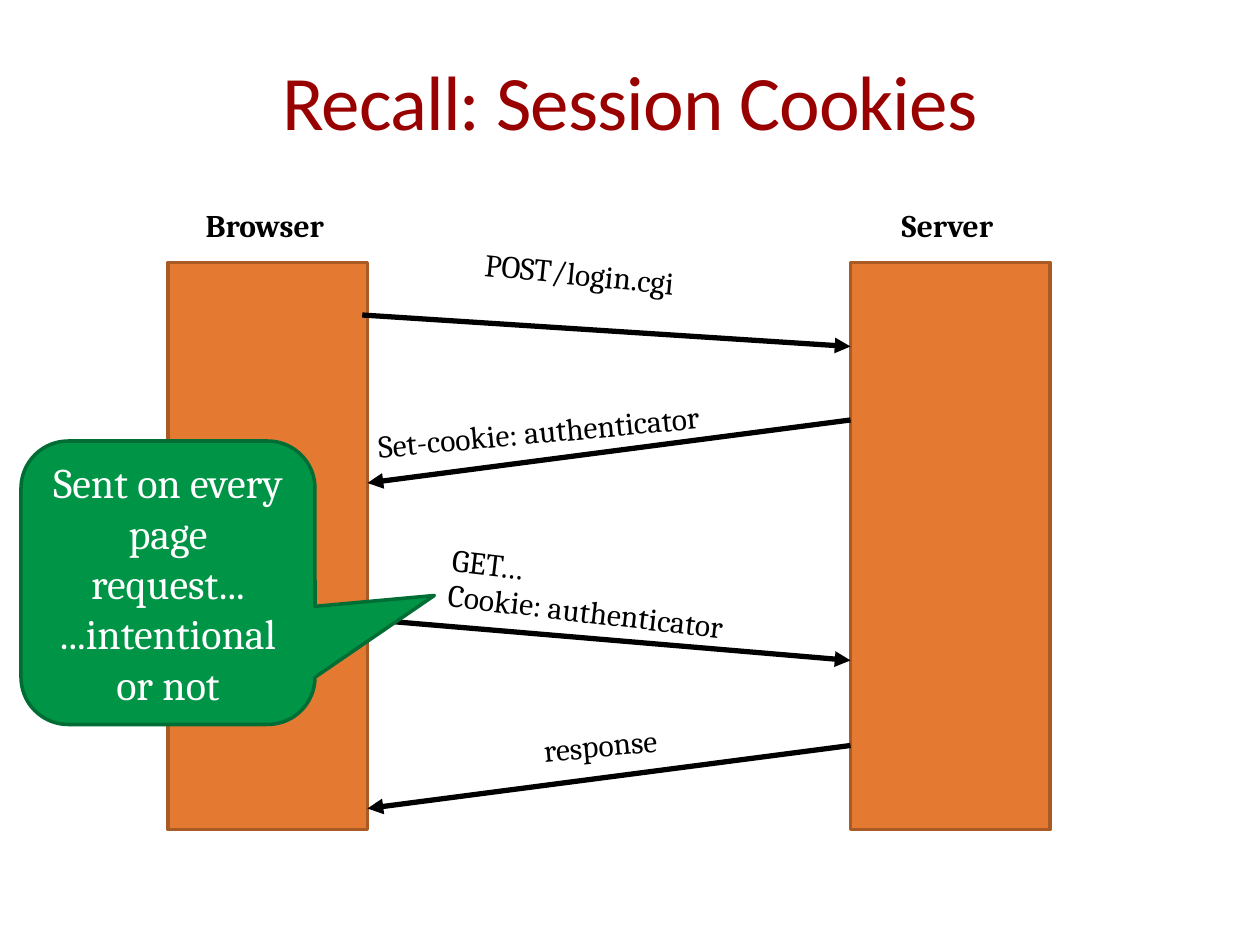
from lxml import etree
from pptx import Presentation
from pptx import util as u
from pptx.dml.color import RGBColor
from pptx.enum import shapes, text
from pptx.oxml.ns import qn

EMU_PER_PX = 7620  # 120 px to the inch

BLACK = RGBColor(0x00, 0x00, 0x00)
WHITE = RGBColor(0xFF, 0xFF, 0xFF)
DARK_RED = RGBColor(0x99, 0x00, 0x00)
ORANGE = RGBColor(0xE4, 0x79, 0x32)
BROWN = RGBColor(0xA9, 0x5A, 0x25)
GREEN = RGBColor(0x00, 0x94, 0x46)
DARK_GREEN = RGBColor(0x00, 0x6D, 0x34)

BROWSER_LEFT, SERVER_LEFT = 160, 810
BAR_TOP, BAR_WIDTH, BAR_HEIGHT = 250, 190, 540
BROWSER_EDGE = BROWSER_LEFT + BAR_WIDTH
REPLY_TILT = 354.64


def px(*lengths):
    return [u.Emu(length * EMU_PER_PX) for length in lengths]


def write_text(frame, *lines, font="Cambria", size=18, color=BLACK, bold=False,
               align=text.PP_ALIGN.LEFT, line_spacing=None, tracking=None):
    """Write one paragraph per line; a newline within a line is a soft break."""
    for index, line in enumerate(lines):
        paragraph = frame.add_paragraph() if index else frame.paragraphs[0]
        paragraph.text = line
        paragraph.alignment = align
        if line_spacing:
            paragraph.line_spacing = u.Pt(line_spacing)
        for run in paragraph.runs:
            run.font.name = font
            run.font.size = u.Pt(size)
            run.font.bold = bold
            run.font.color.rgb = color
            if tracking is not None:
                run._r.get_or_add_rPr().set("spc", str(round(tracking * 100)))


class SequenceSlide:
    """Holds the slide and the common look of its elements."""

    outline_width = u.Pt(2)
    arrow_width = u.Pt(3)

    def __init__(self, presentation):
        self.slide = presentation.slides.add_slide(presentation.slide_layouts[5])

    def title(self, words, left, top, width, height):
        shape = self.slide.shapes.title
        shape.left, shape.top, shape.width, shape.height = px(left, top, width, height)
        frame = shape.text_frame
        frame.margin_left = frame.margin_right = 0
        frame.vertical_anchor = text.MSO_ANCHOR.MIDDLE
        write_text(frame, words, font="Calibri", size=44, color=DARK_RED,
                   align=text.PP_ALIGN.CENTER, tracking=-0.5)

    def box(self, kind, left, top, width, height, fill, outline):
        shape = self.slide.shapes.add_shape(kind, *px(left, top, width, height))
        shape.shadow.inherit = False
        shape.fill.solid()
        shape.fill.fore_color.rgb = fill
        shape.line.color.rgb = outline
        shape.line.width = self.outline_width
        return shape

    def bar(self, left):
        self.box(shapes.MSO_SHAPE.RECTANGLE, left, BAR_TOP, BAR_WIDTH, BAR_HEIGHT,
                 ORANGE, BROWN)

    def label(self, lines, left, top, width, height, rotation=0, wrap=False, **style):
        shape = self.slide.shapes.add_textbox(*px(left, top, width, height))
        shape.rotation = rotation
        frame = shape.text_frame
        frame.word_wrap = wrap
        frame.auto_size = text.MSO_AUTO_SIZE.SHAPE_TO_FIT_TEXT
        write_text(frame, *lines, **style)

    def arrow(self, x1, y1, x2, y2):
        connector = self.slide.shapes.add_connector(
            shapes.MSO_CONNECTOR.STRAIGHT, *px(x1, y1, x2, y2))
        connector.line.color.rgb = BLACK
        connector.line.width = self.arrow_width
        etree.SubElement(connector.line._get_or_add_ln(), qn("a:tailEnd"), type="triangle")
        etree.SubElement(connector._element.spPr, qn("a:effectLst"))

    def callout(self, words, left, top, width, height, adjustments):
        shape = self.box(shapes.MSO_SHAPE.ROUNDED_RECTANGULAR_CALLOUT,
                         left, top, width, height, GREEN, DARK_GREEN)
        for index, value in enumerate(adjustments):
            shape.adjustments[index] = value
        frame = shape.text_frame
        frame.word_wrap = True
        frame.vertical_anchor = text.MSO_ANCHOR.MIDDLE
        write_text(frame, words, size=24, color=WHITE, align=text.PP_ALIGN.CENTER)


def main():
    presentation = Presentation()
    presentation.slide_width, presentation.slide_height = px(1200, 900)
    diagram = SequenceSlide(presentation)

    diagram.title("Recall: Session Cookies", 60, 20, 1080, 150)
    for left in (BROWSER_LEFT, SERVER_LEFT):
        diagram.bar(left)
    diagram.label(["Server"], 847, 190, 116, 48, bold=True)
    diagram.label(["Browser"], 184, 190, 143, 48, bold=True)

    for start_x, start_y, end_x, end_y in (
        (345, 300, SERVER_LEFT, 330),
        (SERVER_LEFT, 400, BROWSER_EDGE, 460),
        (BROWSER_EDGE, 590, SERVER_LEFT, 629),
        (SERVER_LEFT, 710, BROWSER_EDGE, 770),
    ):
        diagram.arrow(start_x, start_y, end_x, end_y)

    diagram.label(["POST/login.cgi"], 449, 240, 282, 60, rotation=5.76)
    diagram.label(["Set-cookie: authenticator"], 348, 380, 468, 60, rotation=REPLY_TILT)
    diagram.label(["GET…", "Cookie: authenticator"], 416, 530, 343, 79,
                  rotation=6.73, wrap=True, line_spacing=20)
    diagram.label(["response"], 506, 684, 157, 53, rotation=REPLY_TILT)

    diagram.callout("Sent on every page request...\n...intentional or not",
                    20, 420, 280, 270, (0.906, 0.045, 0.167))
    presentation.save("out.pptx")


if __name__ == "__main__":
    main()
